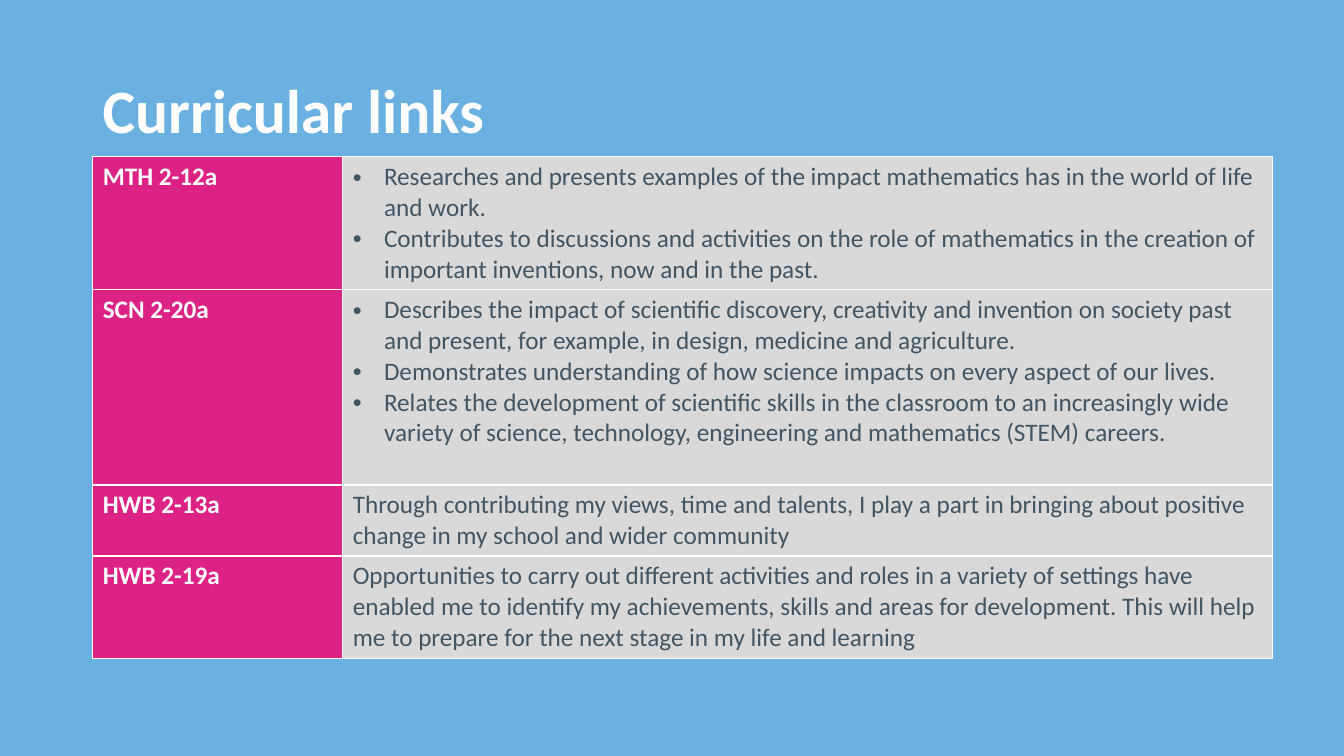
"""Build the "Curricular links" slide."""
from dataclasses import dataclass

from lxml.etree import SubElement
from pptx import Presentation
from pptx.dml.color import RGBColor
from pptx.enum.text import MSO_ANCHOR
from pptx.oxml.ns import qn
from pptx.table import _Cell
from pptx.text.text import TextFrame, _Paragraph
from pptx.util import Inches, Length, Pt


@dataclass(frozen=True)
class Theme:
    """Colours, font and type sizes."""
    background: str = "6AB1E2"
    code_fill: str = "DC2284"
    detail_fill: str = "D9D9D9"
    light: str = "FFFFFF"
    dark: str = "425563"
    font: str = "Calibri"
    title: int = 44
    body: int = 18
    border: int = 1


@dataclass(frozen=True)
class Outcome:
    """A curriculum code, its statements and its share of the slide's height."""
    code: str
    statements: tuple[str, ...]
    height: float
    bulleted: bool = False


THEME = Theme()
WIDTH, HEIGHT = Inches(13.33), Inches(7.5)
LEFT = 6.9
TITLE_TOP, TITLE_WIDTH, TITLE_HEIGHT = 5.3, 83.4, 19.3
TABLE_TOP = 20.75
COLUMNS = (18.6, 69.2)
BULLET_INDENT = Inches(0.31)

OUTCOMES = (
    Outcome("MTH 2-12a", (
        "Researches and presents examples of the impact mathematics has in the world of life and work.",
        "Contributes to discussions and activities on the role of mathematics in the creation of "
        "important inventions, now and in the past.",
    ), 17.6, bulleted=True),
    Outcome("SCN 2-20a", (
        "Describes the impact of scientific discovery, creativity and invention on society past and "
        "present, for example, in design, medicine and agriculture.",
        "Demonstrates understanding of how science impacts on every aspect of our lives.",
        "Relates the development of scientific skills in the classroom to an increasingly wide variety "
        "of science, technology, engineering and mathematics (STEM) careers.",
    ), 25.8, bulleted=True),
    Outcome("HWB 2-13a", (
        "Through contributing my views, time and talents, I play a part in bringing about positive "
        "change in my school and wider community",
    ), 9.4),
    Outcome("HWB 2-19a", (
        "Opportunities to carry out different activities and roles in a variety of settings have "
        "enabled me to identify my achievements, skills and areas for development. This will help me "
        "to prepare for the next stage in my life and learning",
    ), 13.6),
)


def across(percent: float) -> Length:
    """Return a percentage of the slide's width."""
    return Length(round(WIDTH * percent / 100))


def down(percent: float) -> Length:
    """Return a percentage of the slide's height."""
    return Length(round(HEIGHT * percent / 100))


def add_bullet(p: _Paragraph) -> None:
    """Give a paragraph a hanging bullet."""
    pPr = p._p.get_or_add_pPr()
    pPr.set("marL", str(BULLET_INDENT))
    pPr.set("indent", str(-BULLET_INDENT))
    SubElement(pPr, qn("a:buFont"), typeface="Arial")
    SubElement(pPr, qn("a:buChar"), char="•")


def write(tf: TextFrame, *lines: str, color: str, size: int = THEME.body, bold: bool = False,
          bulleted: bool = False, spacing: float = 1.0) -> None:
    """Write each line as a formatted paragraph."""
    tf.word_wrap = True
    for i, line in enumerate(lines):
        p = tf.add_paragraph() if i else tf.paragraphs[0]
        if bulleted:
            add_bullet(p)
        p.line_spacing = spacing
        r = p.add_run()
        r.text = line
        r.font.name = THEME.font
        r.font.size = Pt(size)
        r.font.bold = bold
        r.font.color.rgb = RGBColor.from_string(color)


def style_cell(cell: _Cell, fill: str) -> None:
    """Draw the four borders of a cell and fill it."""
    tcPr = cell._tc.get_or_add_tcPr()
    for side in ("lnL", "lnR", "lnT", "lnB"):
        ln = SubElement(tcPr, qn(f"a:{side}"), w=str(Pt(THEME.border)))
        SubElement(SubElement(ln, qn("a:solidFill")), qn("a:srgbClr"), val=THEME.light)
    cell.fill.solid()
    cell.fill.fore_color.rgb = RGBColor.from_string(fill)


def main() -> None:
    """Create and save the slide."""
    prs = Presentation()
    prs.slide_width, prs.slide_height = WIDTH, HEIGHT
    s = prs.slides.add_slide(prs.slide_layouts[6])
    s.background.fill.solid()
    s.background.fill.fore_color.rgb = RGBColor.from_string(THEME.background)

    title = s.shapes.add_textbox(across(LEFT), down(TITLE_TOP), across(TITLE_WIDTH), down(TITLE_HEIGHT))
    title.text_frame.vertical_anchor = MSO_ANCHOR.MIDDLE
    write(title.text_frame, "Curricular links", color=THEME.light, size=THEME.title, bold=True, spacing=0.9)

    table = s.shapes.add_table(
        len(OUTCOMES), len(COLUMNS), across(LEFT), down(TABLE_TOP),
        across(sum(COLUMNS)), down(sum(o.height for o in OUTCOMES))).table
    table.first_row = table.horz_banding = False
    for column, width in zip(table.columns, COLUMNS):
        column.width = across(width)
    for row, outcome in zip(table.rows, OUTCOMES):
        row.height = down(outcome.height)
        code, detail = row.cells
        style_cell(code, THEME.code_fill)
        style_cell(detail, THEME.detail_fill)
        write(code.text_frame, outcome.code, color=THEME.light, bold=True)
        write(detail.text_frame, *outcome.statements, color=THEME.dark, bulleted=outcome.bulleted)

    prs.save("out.pptx")


if __name__ == "__main__":
    main()
